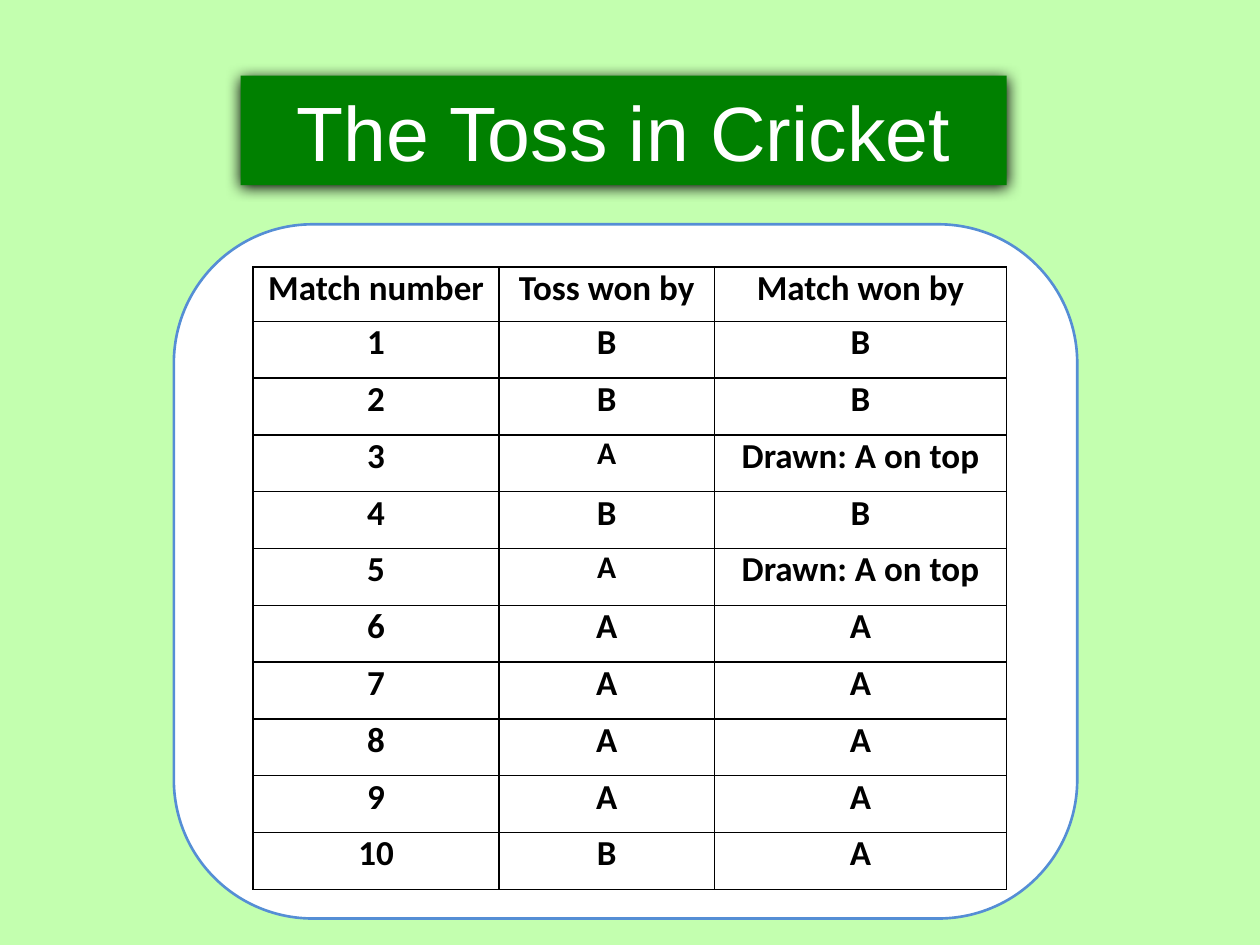
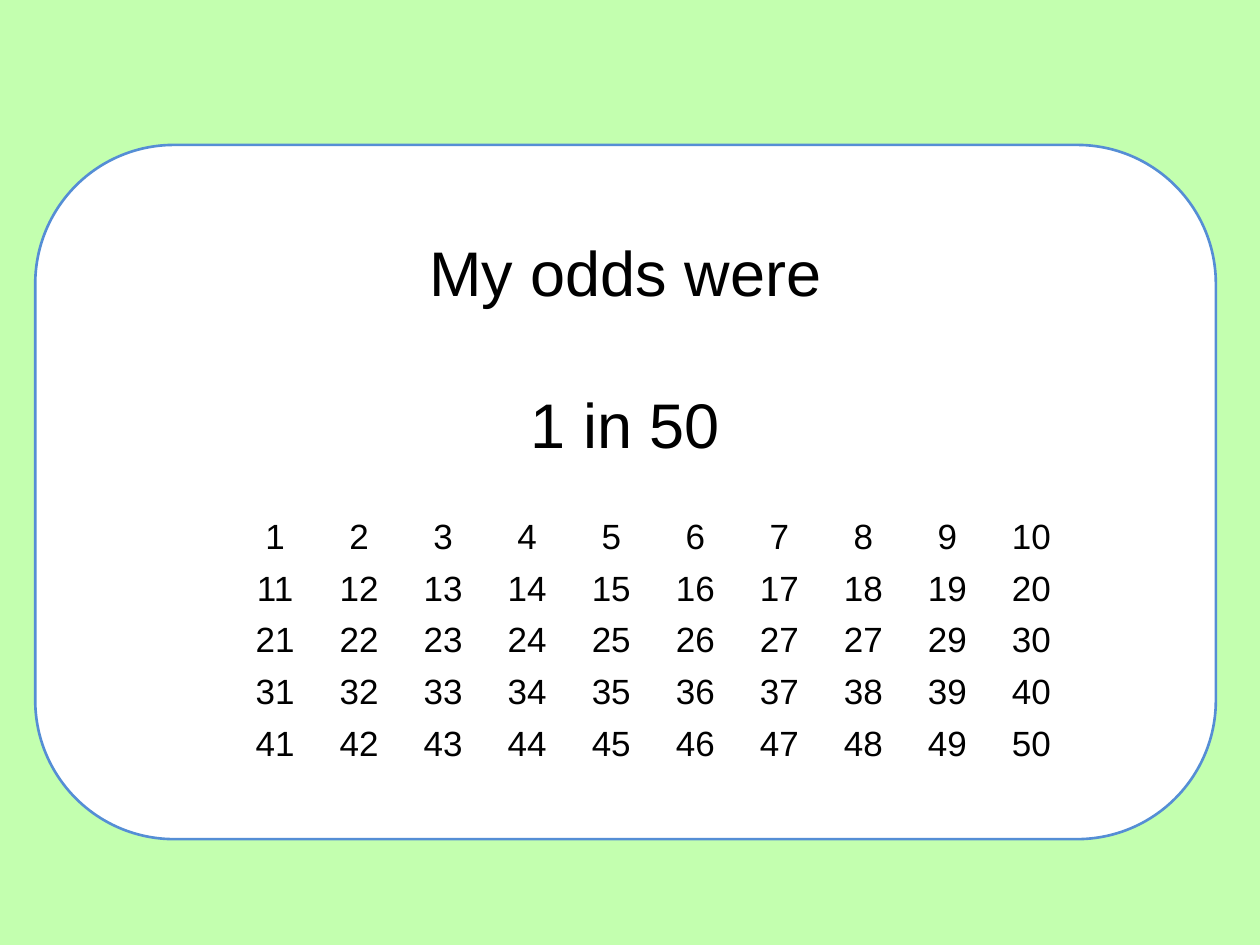
from lxml import etree
from pptx import Presentation
from pptx.dml.color import RGBColor
from pptx.enum.shapes import MSO_SHAPE
from pptx.enum.text import MSO_ANCHOR, MSO_AUTO_SIZE, PP_ALIGN
from pptx.oxml.ns import qn
from pptx.util import Inches, Pt

ROUNDED = MSO_SHAPE.ROUNDED_RECTANGLE
TOP, MIDDLE = MSO_ANCHOR.TOP, MSO_ANCHOR.MIDDLE
CENTER = PP_ALIGN.CENTER
NO_AUTOFIT = MSO_AUTO_SIZE.NONE

COLOURS = {
    "field": "C3FFAF",
    "card": "FFFFFF",
    "outline": "558ED5",
    "banner": "008000",
    "banner text": "FFFFFF",
    "ink": "000000",
}
RGB = {name: RGBColor.from_string(value) for name, value in COLOURS.items()}

prs = Presentation()
prs.slide_width, prs.slide_height = Inches(10), Inches(7.5)
UNIT = prs.slide_width / 100  # one hundredth of the slide's width
TITLE_ONLY, BLANK = prs.slide_layouts[5], prs.slide_layouts[6]


def box(*lengths):
    """Turn hundredths of the slide's width into slide lengths."""
    return [round(length * UNIT) for length in lengths]


def write(frame, text, size, font="Arial", colour="ink", bold=False, gap=0):
    """Fill a text frame, one centred paragraph a line, gap points apart."""
    frame.text = text
    for index, paragraph in enumerate(frame.paragraphs):
        paragraph.alignment = CENTER
        paragraph.space_before = Pt(gap if index else 0)
        run_font = paragraph.runs[0].font
        run_font.name, run_font.size, run_font.bold = font, Pt(size), bold
        run_font.color.rgb = RGB[colour]


# Shared background
backdrop = prs.slide_master.background.fill
backdrop.solid()
backdrop.fore_color.rgb = RGB["field"]

# Content of the two tables
toss_winners = "BBABAAAAAB"
match_winners = ["B", "B", "Drawn: A on top", "B", "Drawn: A on top"] + ["A"] * 5
matches = [["Match number", "Toss won by", "Match won by"]]
for number, winners in enumerate(zip(toss_winners, match_winners), start=1):
    matches.append([str(number), *winners])

odds = [[str(10 * row + column) for column in range(1, 11)] for row in range(5)]
odds[2][7] = "27"

# Each slide: layout, card, table corner, columns, rows, text format, insets, ruled
pages = [
    (TITLE_ONLY, (13.8, 17.8, 71.7, 55.1), matches, (20.1, 21.2),
     [19.5, 17.1, 23.2], [4.3] + [4.51] * 10,
     {"size": 20, "font": "Calibri", "bold": True}, (0.7, 0, 0.7, 0), True),
    (BLANK, (2.8, 11.5, 93.7, 55.1), odds, (18.5, 40.6),
     [6.67] * 10, [4.1] * 5,
     {"size": 20}, (0.5, 0.5, 0.5, 0.4), False),
]

cards, tables = [], []
for layout, card_box, values, corner, widths, heights, style, insets, ruled in pages:
    slide = prs.slides.add_slide(layout)

    # White card
    card = slide.shapes.add_shape(ROUNDED, *box(*card_box))
    card.shadow.inherit = False
    card.adjustments[0] = 0.2
    card.fill.solid()
    card.fill.fore_color.rgb = RGB["card"]
    card.line.color.rgb = RGB["outline"]
    card.line.width = Pt(1.5)
    cards.append(card)

    # Table on the card
    table = slide.shapes.add_table(
        len(heights), len(widths), *box(*corner, sum(widths), sum(heights))).table
    table.first_row = table.horz_banding = False
    tables.append(table)
    for column, width in zip(table.columns, box(*widths)):
        column.width = width
    for row, height, row_values in zip(table.rows, box(*heights), values):
        row.height = height
        for cell, value in zip(row.cells, row_values):
            (cell.margin_left, cell.margin_top,
             cell.margin_right, cell.margin_bottom) = box(*insets)
            cell.vertical_anchor = TOP
            write(cell.text_frame, value, **style)
            properties = cell._tc.get_or_add_tcPr()
            for side in ("a:lnL", "a:lnR", "a:lnT", "a:lnB"):
                border = etree.SubElement(properties, qn(side), w=str(Pt(1)))
                if ruled:
                    paint = etree.SubElement(border, qn("a:solidFill"))
                    etree.SubElement(paint, qn("a:srgbClr"), val=COLOURS["ink"])
                else:
                    etree.SubElement(border, qn("a:noFill"))
            cell.fill.background()

# Smaller letters where the drawn matches' toss is named
for drawn_match in (3, 5):
    write(tables[0].cell(drawn_match, 1).text_frame, "A",
          size=18, font="Calibri", bold=True)

# Title banner with a soft shadow
banner = prs.slides[0].shapes.title
banner.left, banner.top, banner.width, banner.height = box(19.1, 6, 60.8, 8.7)
banner.fill.solid()
banner.fill.fore_color.rgb = RGB["banner"]
banner.text_frame.auto_size = NO_AUTOFIT
banner.text_frame.vertical_anchor = MIDDLE
write(banner.text_frame, "The Toss in Cricket", size=44, colour="banner text")
effects = etree.SubElement(banner._element.spPr, qn("a:effectLst"))
shadow = etree.SubElement(effects, qn("a:outerShdw"), blurRad=str(Pt(8.5)),
                          dist=str(Pt(1)), dir="5400000", rotWithShape="0")
etree.SubElement(shadow, qn("a:srgbClr"), val=COLOURS["ink"])

# Odds statement above the number grid
statement = cards[1].text_frame
statement.vertical_anchor = TOP
statement.margin_top = Inches(0.38)
write(statement, "My odds were\n1 in 50", size=36, gap=44)

prs.save("out.pptx")
